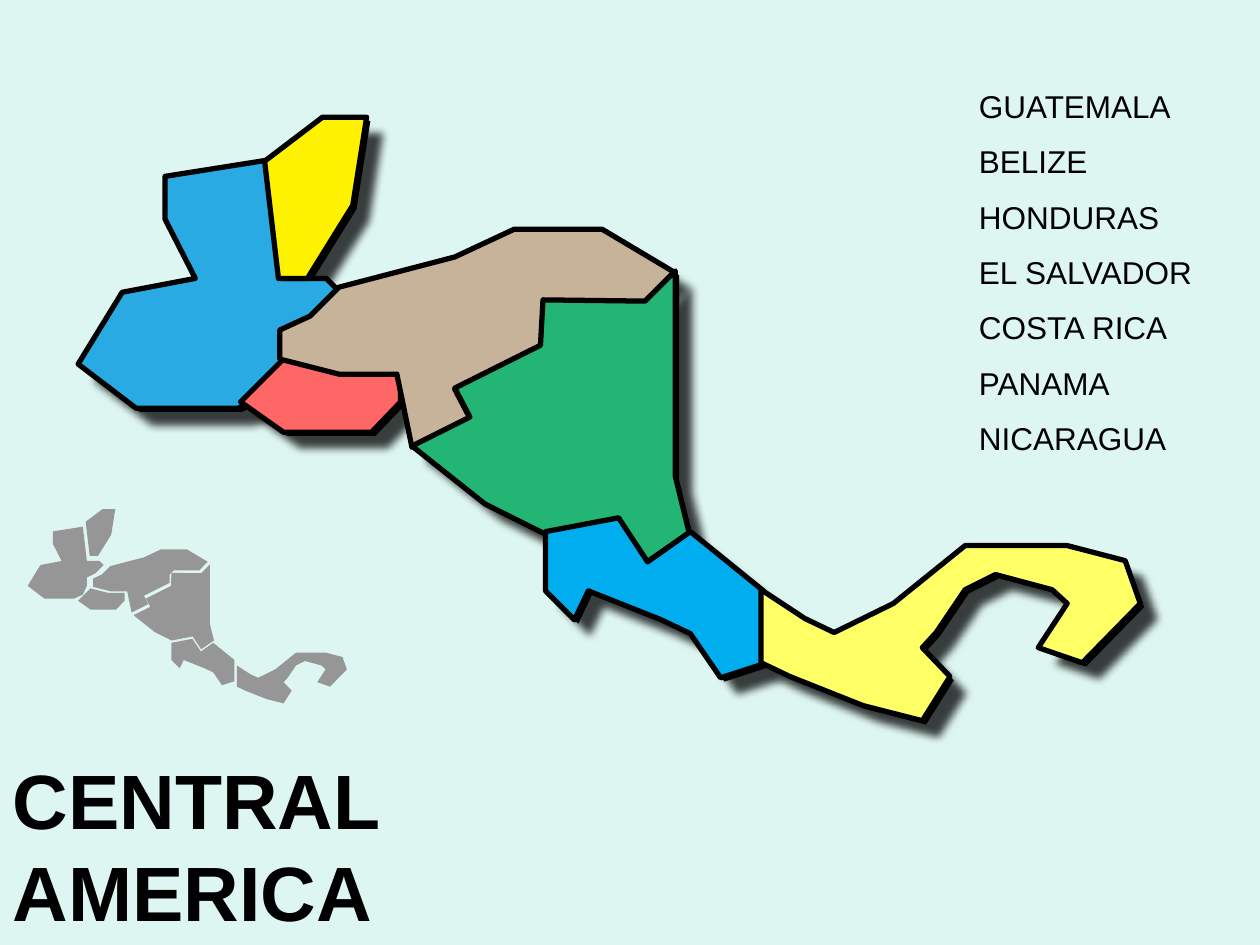
"""Build a map slide of Central America with country names and a small grey inset map."""
from lxml.etree import SubElement
from pptx import Presentation
from pptx.dml.color import RGBColor
from pptx.enum.text import MSO_ANCHOR, MSO_AUTO_SIZE, PP_ALIGN
from pptx.oxml.ns import qn
from pptx.util import Cm, Pt

COLORS = {
    "background": "DEF6F1", "ink": "000000", "inset": "969696",
    "Guatemala": "29AAE2", "Belize": "FFF200", "El Salvador": "FF6666",
    "Honduras": "C7B399", "Nicaragua": "22B573", "Costa Rica": "00AEEF",
    "Panama": "FFFF66",
}
MAP_UNIT = Cm(0.0254)
INSET_SCALE = 0.29
SHADE_OFFSET = 3

OUTLINES = {
    "Guatemala": [
        (62, 289), (97, 232), (155, 221), (131, 174), (131, 140), (213, 127),
        (224, 221), (259, 221), (270, 232), (247, 255), (224, 266), (224, 289),
        (213, 313), (189, 324), (155, 324), (108, 324)],
    "Belize": [
        (210, 128), (256, 93), (291, 93), (280, 163), (244, 221), (221, 221)],
    "El Salvador": [
        (191, 319), (225, 285), (272, 297), (318, 297), (318, 319), (295, 343),
        (225, 343)],
    "Honduras": [
        (269, 297), (222, 285), (222, 262), (246, 251), (269, 228), (315, 216),
        (361, 204), (408, 182), (478, 182), (535, 216), (512, 240), (442, 240),
        (431, 251), (431, 274), (361, 309), (373, 332), (327, 355), (315, 297)],
    "Nicaragua": [
        (327, 354), (373, 331), (361, 308), (429, 274), (431, 238), (512, 239),
        (536, 215), (536, 378), (547, 423), (512, 447), (489, 412), (431, 423),
        (385, 400)],
    "Costa Rica": [
        (433, 422), (433, 469), (456, 492), (467, 469), (525, 492), (548, 503),
        (572, 538), (606, 527), (606, 469), (548, 422), (514, 446), (491, 411)],
    "Panama": [
        (859, 526), (824, 514), (847, 479), (835, 468), (790, 456), (766, 468),
        (743, 502), (732, 514), (754, 537), (732, 572), (685, 560), (627, 537),
        (604, 526), (604, 468), (639, 491), (662, 502), (709, 479), (766, 433),
        (812, 433), (847, 433), (893, 445), (905, 479)],
}
INSET_CORNERS = {
    "Guatemala": (22, 418), "Belize": (68, 404), "El Salvador": (62, 467),
    "Honduras": (74, 436), "Nicaragua": (106, 448), "Costa Rica": (136, 507),
    "Panama": (188, 518),
}
COUNTRY_NAMES = ["GUATEMALA", "BELIZE", "HONDURAS", "EL SALVADOR",
                 "COSTA RICA", "PANAMA", "NICARAGUA"]


def write_text(paragraph, text, size, bold=False, space_before=0):
    paragraph.text = text
    paragraph.alignment = PP_ALIGN.LEFT
    paragraph.space_before = Pt(space_before)
    paragraph.font.name = "Arial"
    paragraph.font.size = Pt(size)
    paragraph.font.bold = bold
    paragraph.font.color.rgb = RGBColor.from_string(COLORS["ink"])


def draw_country(shapes, country, color, scale=1, origin=(0, 0)):
    outline = OUTLINES[country]
    builder = shapes.build_freeform(*outline[0], scale=MAP_UNIT * scale)
    builder.add_line_segments(outline[1:], close=True)
    land = builder.convert_to_shape(*(round(MAP_UNIT * place) for place in origin))
    land.shadow.inherit = False
    land.fill.solid()
    land.fill.fore_color.rgb = RGBColor.from_string(COLORS[color])
    land.line.fill.background()
    return land


prs = Presentation()
prs.slide_width, prs.slide_height = Cm(25.4), Cm(19.05)
slide = prs.slides.add_slide(prs.slide_layouts[1])
slide.background.fill.solid()
slide.background.fill.fore_color.rgb = RGBColor.from_string(COLORS["background"])

shaded_map = slide.shapes.add_group_shape()
for country in OUTLINES:
    shade = draw_country(shaded_map.shapes, country, "ink",
                         origin=(SHADE_OFFSET, SHADE_OFFSET))
    effects = shade.element.spPr.find(qn("a:effectLst"))
    outer = SubElement(effects, qn("a:outerShdw"), blurRad=str(Pt(5)),
                       dist=str(Pt(10)), dir="2700000", algn="tl", rotWithShape="0")
    shadow_color = SubElement(outer, qn("a:srgbClr"), val=COLORS["ink"])
    SubElement(shadow_color, qn("a:alpha"), val="75000")

for country in OUTLINES:
    land = draw_country(slide.shapes, country, country)
    land.line.color.rgb = RGBColor.from_string(COLORS["ink"])
    land.line.width = Pt(3)

for country, corner in INSET_CORNERS.items():
    origin = [edge - INSET_SCALE * min(values)
              for edge, values in zip(corner, zip(*OUTLINES[country]))]
    draw_country(slide.shapes, country, "inset", INSET_SCALE, origin)

heading = slide.shapes.title
heading.left, heading.top = Cm(0), Cm(15.44)
heading.width, heading.height = Cm(21.59), Cm(3.18)
heading.text_frame.auto_size = MSO_AUTO_SIZE.NONE
heading.text_frame.vertical_anchor = MSO_ANCHOR.MIDDLE
write_text(heading.text_frame.paragraphs[0], "CENTRAL\vAMERICA", size=44, bold=True)

name_list = slide.placeholders[1]
name_list.left, name_list.top = Cm(19.48), Cm(1.63)
name_list.width, name_list.height = Cm(6.99), Cm(7.9)
name_list.text_frame.auto_size = MSO_AUTO_SIZE.NONE
name_list.text_frame.vertical_anchor = MSO_ANCHOR.TOP
for index, name in enumerate(COUNTRY_NAMES):
    entry = (name_list.text_frame.add_paragraph() if index
             else name_list.text_frame.paragraphs[0])
    properties = entry._p.get_or_add_pPr()
    properties.set("marL", "0")
    properties.set("indent", "0")
    SubElement(properties, qn("a:buNone"))
    write_text(entry, name, size=18, space_before=10 if index else 0)

prs.save("out.pptx")
